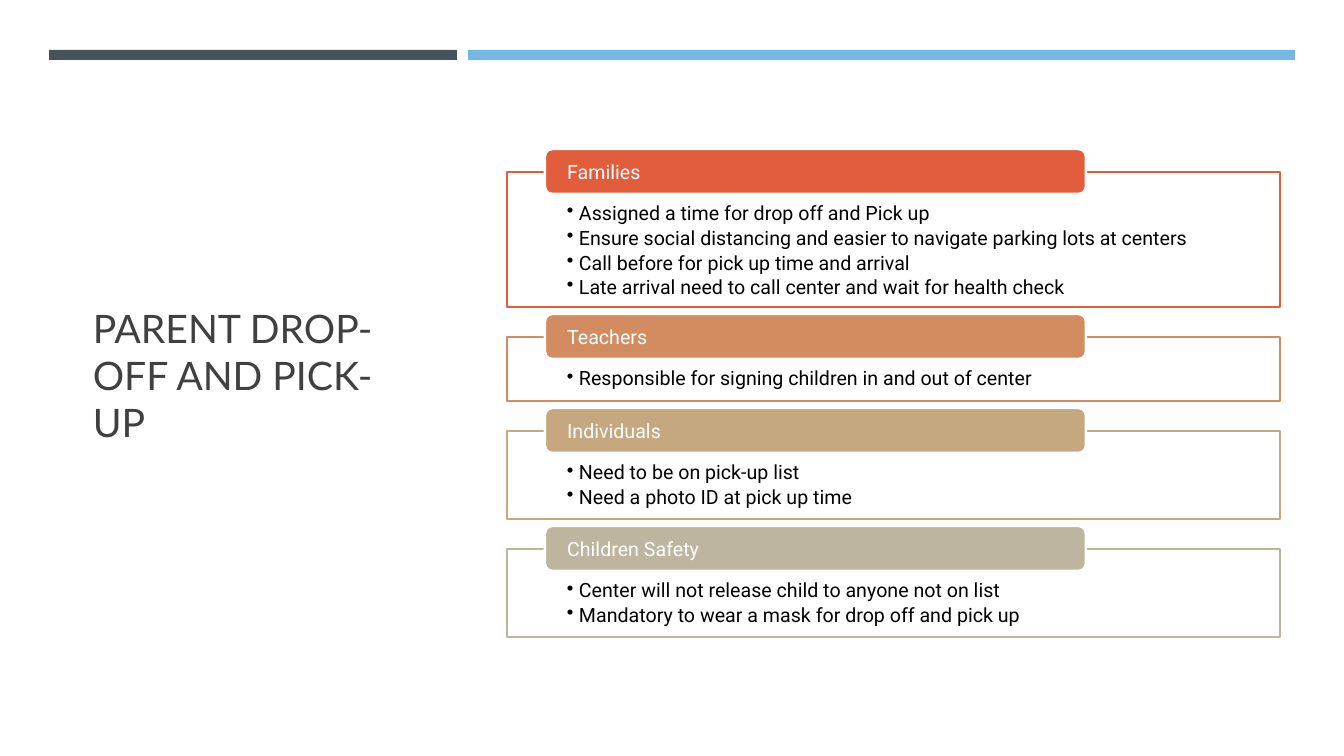
import pptx
import pptx.util
import pptx.dml.color
import pptx.enum.shapes
import pptx.enum.text
import pptx.oxml

COLORS = {
    "white": "FFFFFF", "black": "000000", "title": "404040",
    "slate": "465359", "sky": "71B9E4",
    "red": "E25D3C", "clay": "D28C60", "tan": "C6A880", "sage": "BDB59D",
}
GROUPS = [
    ("Families", "red", [
        "Assigned a time for drop off and Pick up",
        "Ensure social distancing and easier to navigate parking lots at centers",
        "Call before for pick up time and arrival",
        "Late arrival need to call center and wait for health check"]),
    ("Teachers", "clay", [
        "Responsible for signing children in and out of center"]),
    ("Individuals", "tan", [
        "Need to be on pick-up list",
        "Need a photo ID at pick up time"]),
    ("Children Safety", "sage", [
        "Center will not release child to anyone not on list",
        "Mandatory to wear a mask for drop off and pick up"]),
]
SHAPE = pptx.enum.shapes.MSO_SHAPE
ANCHOR = pptx.enum.text.MSO_ANCHOR


def px(n):
    return pptx.util.Emu(round(n * 914400 / 100.8))


def color(name):
    return pptx.dml.color.RGBColor.from_string(COLORS[name])


class Deck:
    head, body = "Lato", "Roboto"

    def __init__(self, slide):
        self.slide = slide

    def block(self, kind, x, y, w, h, fill, line=None):
        shape = self.slide.shapes.add_shape(kind, px(x), px(y), px(w), px(h))
        shape.shadow.inherit = False
        shape.fill.solid()
        shape.fill.fore_color.rgb = color(fill)
        if line:
            shape.line.color.rgb = color(line)
            shape.line.width = pptx.util.Pt(1.75)
        else:
            shape.line.fill.background()
        return shape

    def label(self, shape, lines, font, size, ink, anchor, inset=None, bullet=False):
        frame = shape.text_frame
        frame.text = "\n".join(lines)
        frame.word_wrap = True
        frame.vertical_anchor = anchor
        if inset:
            (frame.margin_left, frame.margin_top,
             frame.margin_right, frame.margin_bottom) = map(px, inset)
        for para in frame.paragraphs:
            para.alignment = pptx.enum.text.PP_ALIGN.LEFT
            if bullet:
                self.bullet(para)
            for run in para.runs:
                run.font.name = font
                run.font.size = pptx.util.Pt(size)
                run.font.color.rgb = color(ink)

    def bullet(self, para):
        para.level = 1
        para.line_spacing = 0.9
        para.space_after = pptx.util.Pt(2.4)
        props = para._p.get_or_add_pPr()
        props.set("marL", str(px(12)))
        props.set("indent", str(-px(12)))
        space = "http://schemas.openxmlformats.org/drawingml/2006/main"
        props.append(pptx.oxml.parse_xml(f'<a:buChar xmlns:a="{space}" char="•"/>'))

    def title(self, text, x, y, w, h):
        box = self.slide.shapes.add_textbox(px(x), px(y), px(w), px(h))
        self.label(box, [text], self.head, 28, "title", ANCHOR.MIDDLE)

    def group(self, name, hue, items, y, h):
        panel = self.block(SHAPE.RECTANGLE, 507, y, 773, h, "white", hue)
        self.label(panel, items, self.body, 14, "black", ANCHOR.TOP,
                   (60, 32, 60, 11), bullet=True)
        tab = self.block(SHAPE.ROUNDED_RECTANGLE, 545, y - 23, 541, 45, hue, "white")
        self.label(tab, [name], self.body, 14, "white", ANCHOR.MIDDLE, (20, 0, 20, 0))


def main():
    prs = pptx.Presentation()
    prs.slide_width, prs.slide_height = px(1344), px(756)
    deck = Deck(prs.slides.add_slide(prs.slide_layouts[6]))

    # Title and top bars
    deck.title("PARENT DROP-OFF AND PICK-UP", 83, 115, 337, 519)
    deck.block(SHAPE.RECTANGLE, 49, 50, 408, 10, "slate")
    deck.block(SHAPE.RECTANGLE, 468, 50, 827, 10, "sky")

    # Stacked groups: each panel grows with its number of items
    top, gap = 172, 30
    for name, hue, items in GROUPS:
        high = 41 + 47 * len(items) // 2
        deck.group(name, hue, items, top, high)
        top += high + gap

    prs.save("out.pptx")


if __name__ == "__main__":
    main()
